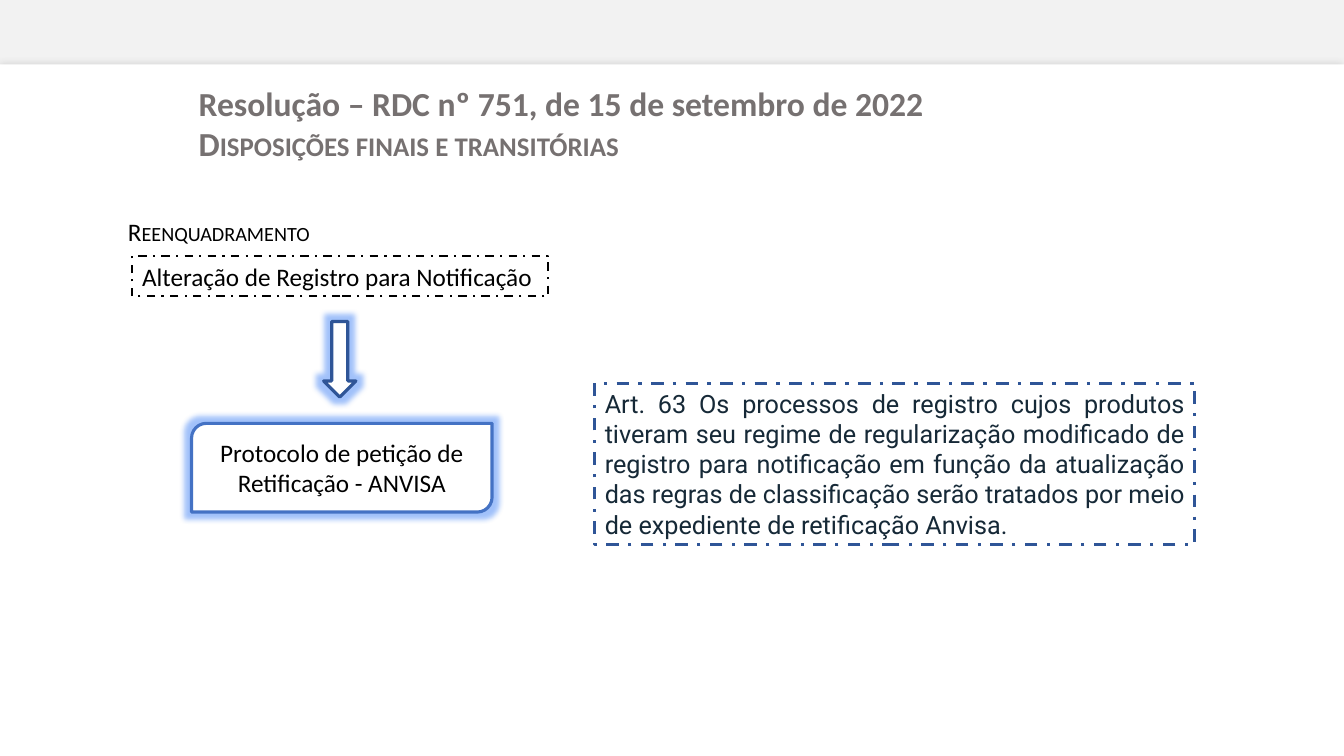
from dataclasses import dataclass
from typing import Optional

from lxml import etree
from pptx import Presentation
from pptx.dml.color import RGBColor
from pptx.enum.dml import MSO_LINE
from pptx.enum.shapes import MSO_SHAPE
from pptx.enum.text import MSO_ANCHOR, MSO_AUTO_SIZE, PP_ALIGN
from pptx.oxml.ns import qn
from pptx.util import Emu, Inches, Pt

RECTANGLE = MSO_SHAPE.RECTANGLE
DOWN_ARROW = MSO_SHAPE.DOWN_ARROW
ROUNDED_DIAGONAL = MSO_SHAPE.ROUND_2_DIAG_RECTANGLE
DASH_DOT = MSO_LINE.DASH_DOT
TOP, MIDDLE = MSO_ANCHOR.TOP, MSO_ANCHOR.MIDDLE
LEFT, CENTER, JUSTIFY = PP_ALIGN.LEFT, PP_ALIGN.CENTER, PP_ALIGN.JUSTIFY
GROW, FIXED = MSO_AUTO_SIZE.SHAPE_TO_FIT_TEXT, MSO_AUTO_SIZE.NONE

SLIDE_WIDTH, SLIDE_HEIGHT = Inches(13.33), Inches(7.5)


@dataclass(frozen=True)
class Theme:
    backdrop: str = "F2F2F2"
    paper: str = "FFFFFF"
    shade: str = "A6A6A6"
    heading: str = "767171"
    ink: str = "000000"
    article: str = "162937"
    accent: str = "4472C4"
    accent_dark: str = "2F5597"
    font: str = "Calibri"
    article_font: str = "Roboto"
    heading_size: int = 24
    body_size: int = 18
    thin: float = 1.5
    thick: float = 2.25


THEME = Theme()


@dataclass(frozen=True)
class Area:
    left: float
    top: float
    width: float
    height: float

    def emu(self) -> tuple[Emu, Emu, Emu, Emu]:
        return (
            Emu(round(SLIDE_WIDTH * self.left / 100)),
            Emu(round(SLIDE_HEIGHT * self.top / 100)),
            Emu(round(SLIDE_WIDTH * self.width / 100)),
            Emu(round(SLIDE_HEIGHT * self.height / 100)),
        )


@dataclass(frozen=True)
class Wording:
    text: str
    size: int = THEME.body_size
    font: str = THEME.font
    color: str = THEME.ink
    bold: bool = False
    small_caps: bool = False


@dataclass(frozen=True)
class Effect:
    tag: str
    radius_name: str
    radius: float
    color: str
    alpha: int
    saturation: int = 100


@dataclass(frozen=True)
class Block:
    area: Area
    preset: Optional[MSO_SHAPE] = None
    wording: Optional[Wording] = None
    align: PP_ALIGN = LEFT
    fill: Optional[str] = None
    line: Optional[str] = None
    line_width: float = THEME.thick
    dash: Optional[MSO_LINE] = None
    effect: Optional[Effect] = None


GLOW = Effect("a:glow", "rad", 8, THEME.accent, 40, 175)
PANEL_SHADOW = Effect("a:outerShdw", "blurRad", 5, THEME.shade, 42)

PANEL = Block(Area(0, 8.53, 100, 91.47), RECTANGLE,
              fill=THEME.paper, effect=PANEL_SHADOW)
HEADING_AREA = Area(14.03, 10.27, 82.74, 12.13)
HEADING = [
    Wording("Resolução – RDC nº 751, de 15 de setembro de 2022",
            THEME.heading_size, color=THEME.heading, bold=True),
    Wording("Disposições finais e transitórias",
            THEME.heading_size, color=THEME.heading, bold=True, small_caps=True),
]
FLOW = [
    Block(Area(8.78, 28, 16.65, 5.47),
          wording=Wording("Reenquadramento", small_caps=True)),
    Block(Area(44.26, 50.67, 44.64, 21.33),
          wording=Wording(
              "Art. 63 Os processos de registro cujos produtos tiveram seu regime "
              "de regularização modificado de registro para notificação em função "
              "da atualização das regras de classificação serão tratados por meio "
              "de expediente de retificação Anvisa.",
              font=THEME.article_font, color=THEME.article),
          align=JUSTIFY, line=THEME.accent_dark, dash=DASH_DOT),
    Block(Area(9.83, 33.87, 30.98, 5.33),
          wording=Wording("Alteração de Registro para Notificação"),
          line=THEME.ink, line_width=THEME.thin, dash=DASH_DOT),
    Block(Area(24.08, 42.53, 2.4, 10), DOWN_ARROW,
          fill=THEME.paper, line=THEME.accent_dark, effect=GLOW),
    Block(Area(14.25, 56, 22.36, 11.73), ROUNDED_DIAGONAL,
          Wording("Protocolo de petição de Retificação - ANVISA"), CENTER,
          THEME.paper, THEME.accent, effect=GLOW),
]


def rgb(color: str) -> RGBColor:
    return RGBColor.from_string(color)


def write(paragraph, wording: Wording, align: PP_ALIGN) -> None:
    paragraph.alignment = align
    run = paragraph.add_run()
    run.text = wording.text
    run.font.name = wording.font
    run.font.size = Pt(wording.size)
    run.font.bold = wording.bold
    run.font.color.rgb = rgb(wording.color)
    if wording.small_caps:
        run.font._element.set("cap", "small")


def add_effect(shape, effect: Effect) -> None:
    effects = shape._element.spPr.find(qn("a:effectLst"))
    node = etree.SubElement(effects, qn(effect.tag))
    node.set(effect.radius_name, str(Pt(effect.radius)))
    color = etree.SubElement(node, qn("a:srgbClr"), val=effect.color)
    for tag, percent in (("a:satMod", effect.saturation), ("a:alpha", effect.alpha)):
        etree.SubElement(color, qn(tag), val=str(percent * 1000))


def draw(slide, block: Block):
    if block.preset is None:
        shape = slide.shapes.add_textbox(*block.area.emu())
    else:
        shape = slide.shapes.add_shape(block.preset, *block.area.emu())
        shape.shadow.inherit = False
    if block.fill:
        shape.fill.solid()
        shape.fill.fore_color.rgb = rgb(block.fill)
    if block.line:
        shape.line.color.rgb = rgb(block.line)
        shape.line.width = Pt(block.line_width)
        if block.dash:
            shape.line.dash_style = block.dash
    else:
        shape.line.fill.background()
    if block.effect:
        add_effect(shape, block.effect)
    if block.wording:
        frame = shape.text_frame
        frame.word_wrap = True
        frame.auto_size = GROW if block.preset is None else FIXED
        frame.vertical_anchor = TOP if block.preset is None else MIDDLE
        write(frame.paragraphs[0], block.wording, block.align)
    return shape


def fill_heading(slide) -> None:
    heading = slide.shapes.title
    heading.left, heading.top, heading.width, heading.height = HEADING_AREA.emu()
    frame = heading.text_frame
    frame.word_wrap = True
    frame.auto_size = GROW
    frame.vertical_anchor = TOP
    write(frame.paragraphs[0], HEADING[0], LEFT)
    for wording in HEADING[1:]:
        write(frame.add_paragraph(), wording, LEFT)


def main() -> None:
    deck = Presentation()
    deck.slide_width, deck.slide_height = SLIDE_WIDTH, SLIDE_HEIGHT
    slide = deck.slides.add_slide(deck.slide_layouts.get_by_name("Title Only"))
    slide.background.fill.solid()
    slide.background.fill.fore_color.rgb = rgb(THEME.backdrop)
    panel = draw(slide, PANEL)
    slide.shapes.title._element.addprevious(panel._element)
    fill_heading(slide)
    for block in FLOW:
        draw(slide, block)
    deck.save("out.pptx")


if __name__ == "__main__":
    main()
